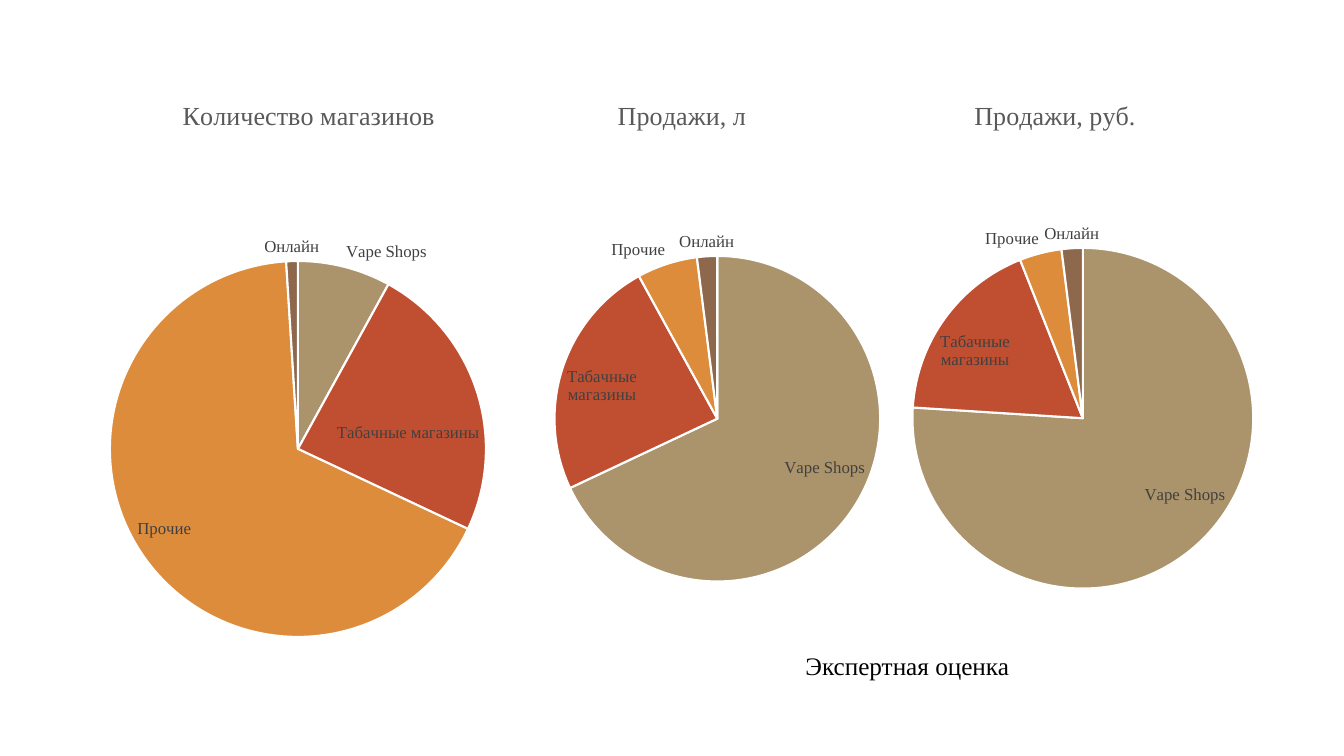
from lxml import etree
from pptx import Presentation
from pptx.chart.data import CategoryChartData
from pptx.dml.color import RGBColor
from pptx.enum.chart import XL_CHART_TYPE, XL_LABEL_POSITION
from pptx.oxml.ns import qn
from pptx.util import Inches, Pt

PIE = XL_CHART_TYPE.PIE
BEST_FIT = XL_LABEL_POSITION.BEST_FIT
FONT = "Times New Roman"
BLACK = RGBColor(0x00, 0x00, 0x00)
WHITE = RGBColor(0xFF, 0xFF, 0xFF)
TITLE_GRAY = RGBColor(0x59, 0x59, 0x59)
LABEL_GRAY = RGBColor(0x40, 0x40, 0x40)
SHOP_COLORS = [
    RGBColor(0xAB, 0x94, 0x6B),
    RGBColor(0xC0, 0x4F, 0x32),
    RGBColor(0xDD, 0x8C, 0x3C),
    RGBColor(0x8E, 0x68, 0x4C),
]
SHOPS = ["Vape Shops", "Табачные магазины", "Прочие", "Онлайн"]
CHART_LEFT, CHART_TOP, CHART_STEP = 0.95, 0.77, 3.7
CHART_WIDTH, CHART_HEIGHT = 4.23, 5.93
PIES = [
    ("Количество магазинов", (8, 24, 67, 1), (1.09, 2.59, 3.73)),
    ("Продажи, л", (68, 24, 6, 2), (5.5, 2.54, 3.23)),
    ("Продажи, руб.", (76, 18, 4, 2), (9.05, 2.46, 3.38)),
]


def format_font(font, size, color):
    font.name = FONT
    font.size = Pt(size)
    font.bold = False
    font.color.rgb = color


def place_plot(chart, x, y, width, height):
    plot_area = chart.plots[0]._element.getparent()
    layout = plot_area.find(qn("c:layout"))
    if layout is None:
        layout = etree.Element(qn("c:layout"))
        plot_area.insert(0, layout)
    manual = etree.SubElement(layout, qn("c:manualLayout"))
    settings = [("layoutTarget", "inner"), ("xMode", "edge"), ("yMode", "edge"),
                ("x", x), ("y", y), ("w", width), ("h", height)]
    for tag, value in settings:
        etree.SubElement(manual, qn(f"c:{tag}")).set("val", str(value))


def add_pie(slide, left, title, values, circle):
    data = CategoryChartData()
    data.categories = SHOPS
    data.add_series(title, values)
    chart = slide.shapes.add_chart(
        PIE, Inches(left), Inches(CHART_TOP),
        Inches(CHART_WIDTH), Inches(CHART_HEIGHT), data).chart
    format_font(chart.font, 10, BLACK)
    chart.has_legend = False
    chart.has_title = True
    paragraph = chart.chart_title.text_frame.paragraphs[0]
    paragraph.add_run().text = title
    format_font(paragraph.runs[0].font, 18.6, TITLE_GRAY)

    plot = chart.plots[0]
    plot.vary_by_categories = True
    for index, color in enumerate(SHOP_COLORS):
        point_format = plot.series[0].points[index].format
        point_format.fill.solid()
        point_format.fill.fore_color.rgb = color
        point_format.line.color.rgb = WHITE
        point_format.line.width = Pt(1.5)
    plot.has_data_labels = True
    labels = plot.data_labels
    format_font(labels.font, 12, LABEL_GRAY)
    labels.show_value = False
    labels.show_category_name = True
    labels.position = BEST_FIT

    circle_left, circle_top, diameter = circle
    place_plot(chart, (circle_left - left) / CHART_WIDTH,
               (circle_top - CHART_TOP) / CHART_HEIGHT,
               diameter / CHART_WIDTH, diameter / CHART_HEIGHT)


def add_note(slide, text):
    box = slide.shapes.add_textbox(Inches(7.89), Inches(6.4), Inches(2.23), Inches(0.4))
    box.text_frame.word_wrap = True
    box.text_frame.text = text
    format_font(box.text_frame.paragraphs[0].runs[0].font, 18, BLACK)


def main():
    """Build the slide of three pies comparing shop types."""
    presentation = Presentation()
    presentation.slide_width = Inches(13.33)
    presentation.slide_height = Inches(7.5)
    slide = presentation.slides.add_slide(presentation.slide_layouts[6])
    for index, (title, values, circle) in enumerate(PIES):
        add_pie(slide, CHART_LEFT + index * CHART_STEP, title, values, circle)
    add_note(slide, "Экспертная оценка")
    presentation.save("out.pptx")


if __name__ == "__main__":
    main()
